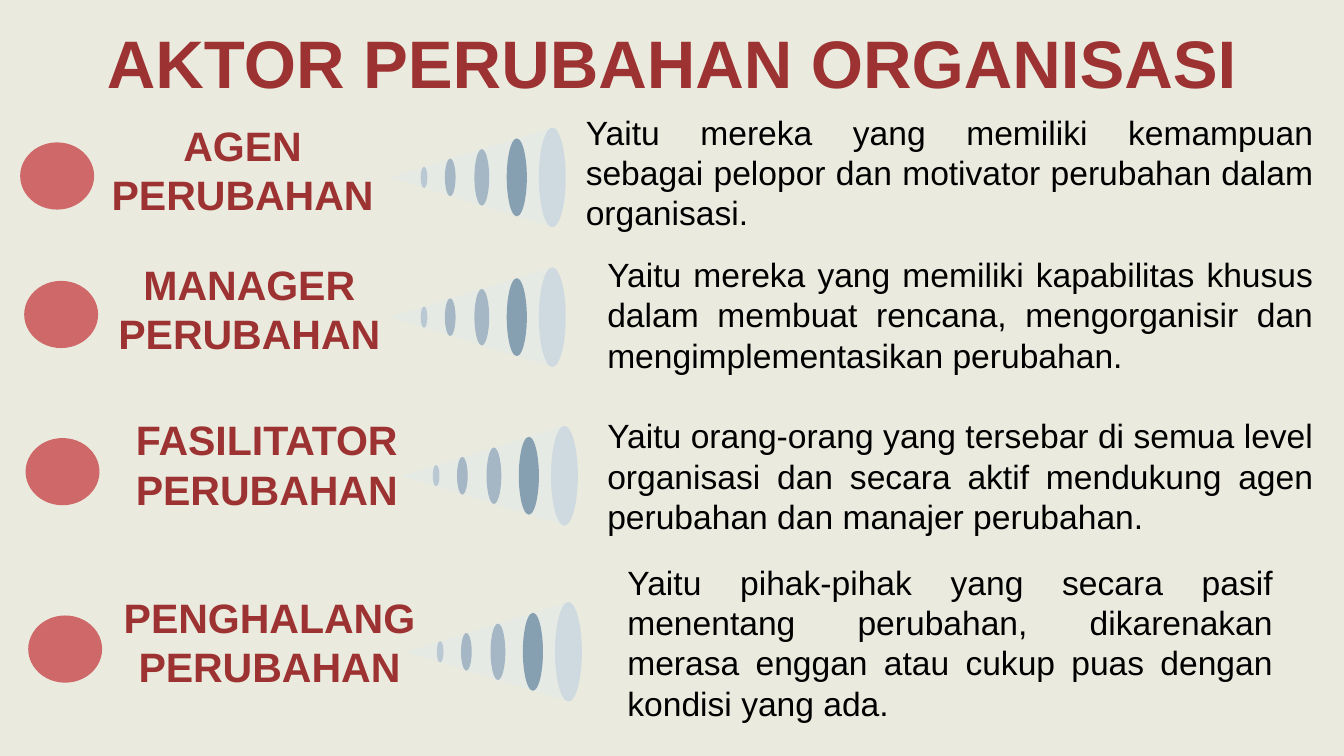
from lxml import etree
from pptx import Presentation
from pptx.dml.color import RGBColor
from pptx.enum.shapes import MSO_SHAPE as Preset
from pptx.enum.text import MSO_ANCHOR as Anchor, PP_ALIGN as Align
from pptx.oxml.ns import qn
from pptx.util import Inches, Pt

BACKGROUND, RED, PINK, PALE = "EAEBDE", "9D3232", "CF6868", "E3E9ED"
TITLE = "AKTOR PERUBAHAN ORGANISASI"
ACTORS = [
    {
        "name": "AGEN PERUBAHAN",
        "text": "Yaitu mereka yang memiliki kemampuan sebagai pelopor dan motivator perubahan dalam organisasi.",
        "dot": (0.15, 1.06), "label": (0.31, 1.32, 2.99), "cone": (2.9, 1.32),
        "description": (4.26, 0.78, 5.61, 1.01),
    },
    {
        "name": "MANAGER PERUBAHAN",
        "text": "Yaitu mereka yang memiliki kapabilitas khusus dalam membuat rencana, mengorganisir dan mengimplementasikan perubahan.",
        "dot": (0.18, 2.09), "label": (0.1, 2.35, 3.51), "cone": (2.9, 2.36),
        "description": (4.42, 1.84, 5.45, 1.01),
    },
    {
        "name": "FASILITATOR PERUBAHAN",
        "text": "Yaitu orang-orang yang tersebar di semua level organisasi dan secara aktif mendukung agen perubahan dan manajer perubahan.",
        "dot": (0.19, 3.26), "label": (0.23, 3.51, 3.51), "cone": (2.99, 3.54),
        "description": (4.42, 3.04, 5.45, 1.01),
    },
    {
        "name": "PENGHALANG PERUBAHAN",
        "text": "Yaitu pihak-pihak yang secara pasif menentang perubahan, dikarenakan merasa enggan atau cukup puas dengan kondisi yang ada.",
        "dot": (0.21, 4.58), "label": (0.25, 4.83, 3.51), "cone": (3.02, 4.85),
        "description": (4.57, 4.13, 5, 1.31),
    },
]
RINGS = [
    (0.23, 0.05, 0.16, "BAC8D3"),
    (0.41, 0.08, 0.28, "A5B7C5"),
    (0.63, 0.11, 0.42, "A5B7C5"),
    (0.87, 0.15, 0.58, "869FB1"),
    (1.11, 0.2, 0.74, "CFD9E0"),
]
CONE_WIDTH, CONE_HEIGHT, CONE_OPACITY = 1.19, 0.73, 44
DOT_SIZE = (0.55, 0.5)
LABEL_HEIGHT = 0.41
HEADING = {"bold": True, "color": RED, "inset": 0.1, "align": Align.CENTER}
TITLE_FORMAT = {**HEADING, "size": 36, "anchor": Anchor.TOP}
LABEL_FORMAT = {**HEADING, "size": 22, "anchor": Anchor.BOTTOM}
DESCRIPTION_FORMAT = {
    "bold": False, "color": "000000", "inset": 0.05, "align": Align.JUSTIFY,
    "size": 18, "anchor": Anchor.TOP,
}


def paint(fill, color):
    fill.solid()
    fill.fore_color.rgb = RGBColor.from_string(color)


def finish(shape, color):
    shape.shadow.inherit = False
    shape.line.fill.background()
    paint(shape.fill, color)


def add_ellipse(shapes, box, color):
    finish(shapes.add_shape(Preset.OVAL, *map(Inches, box)), color)


def add_text(slide, text, box, style):
    frame = slide.shapes.add_textbox(*map(Inches, box)).text_frame
    inset = Inches(style["inset"])
    values = {
        "word_wrap": True, "vertical_anchor": style["anchor"],
        "margin_left": Inches(0.1), "margin_right": Inches(0.1),
        "margin_top": inset, "margin_bottom": inset,
    }
    for name, value in values.items():
        setattr(frame, name, value)
    paragraph = frame.paragraphs[0]
    paragraph.alignment = style["align"]
    run = paragraph.add_run()
    run.text = text
    font = {"name": "Arial", "size": Pt(style["size"]), "bold": style["bold"]}
    for name, value in font.items():
        setattr(run.font, name, value)
    paint(run.font.fill, style["color"])


def add_cone(slide, left, middle):
    shapes = slide.shapes.add_group_shape().shapes
    right, half = left + CONE_WIDTH, CONE_HEIGHT / 2
    builder = shapes.build_freeform(Inches(left), Inches(middle))
    corners = [(right, middle - half), (right, middle + half)]
    builder.add_line_segments([tuple(map(Inches, corner)) for corner in corners])
    cone = builder.convert_to_shape()
    finish(cone, PALE)
    color = cone.fill._xPr.find(qn("a:solidFill"))[0]
    etree.SubElement(color, qn("a:alpha")).set("val", str(CONE_OPACITY * 1000))
    for offset, width, height, ring_color in RINGS:
        add_ellipse(shapes, (left + offset, middle - height / 2, width, height), ring_color)


def main():
    presentation = Presentation()
    presentation.slide_width = Inches(10)
    presentation.slide_height = Inches(10) * 9 // 16
    slide = presentation.slides.add_slide(presentation.slide_layouts[6])
    paint(slide.background.fill, BACKGROUND)
    add_text(slide, TITLE, (0, 0.06, 10, 0.63), TITLE_FORMAT)
    for actor in ACTORS:
        add_ellipse(slide.shapes, actor["dot"] + DOT_SIZE, PINK)
        add_text(slide, actor["name"], actor["label"] + (LABEL_HEIGHT,), LABEL_FORMAT)
        add_cone(slide, *actor["cone"])
        add_text(slide, actor["text"], actor["description"], DESCRIPTION_FORMAT)
    presentation.save("out.pptx")


if __name__ == "__main__":
    main()
